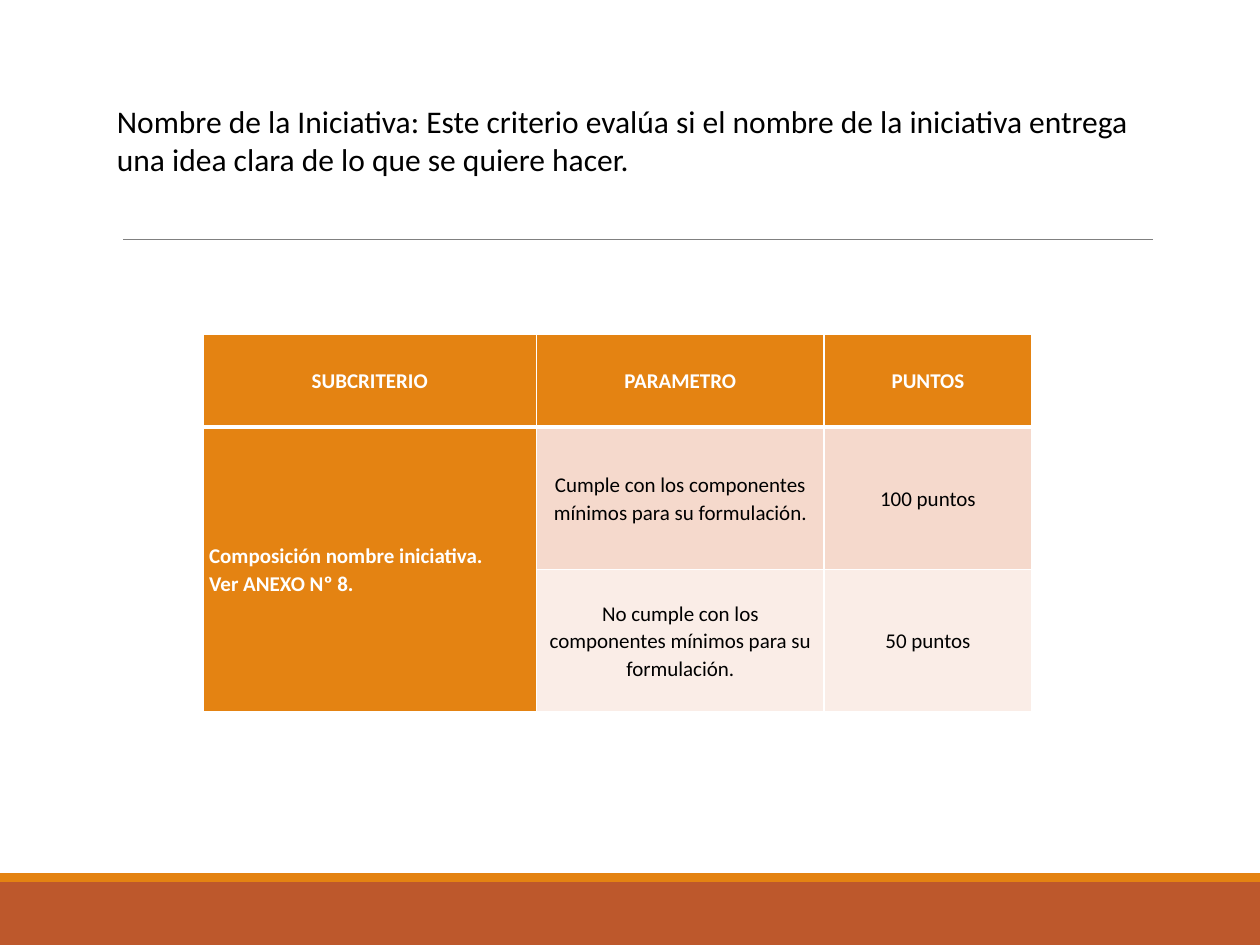
from lxml.etree import SubElement
from pptx import Presentation
from pptx.dml.color import RGBColor
from pptx.enum.shapes import MSO_CONNECTOR, MSO_SHAPE
from pptx.enum.text import MSO_ANCHOR, PP_ALIGN
from pptx.oxml.ns import qn
from pptx.util import Inches, Pt

# Content
TITLE = ("Nombre de la Iniciativa: Este criterio evalúa si el nombre de la "
         "iniciativa entrega una idea clara de lo que se quiere hacer.")
ROWS = [
    ["SUBCRITERIO", "PARAMETRO", "PUNTOS"],
    ["Composición nombre iniciativa.\nVer ANEXO Nº 8.",
     "Cumple con los componentes mínimos para su formulación.", "100 puntos"],
    [None, "No cumple con los componentes mínimos para su formulación.", "50 puntos"],
]

# Format
COLORS = {"orange": "E48312", "rust": "BD582C", "gray": "808080", "white": "FFFFFF",
          "black": "000000", "peach": "F5D9CC", "pale": "FAEDE7"}
ROW_FILLS = ["orange", "peach", "pale"]
WIDTH, HEIGHT = 10, 7.5
COLUMN_WIDTHS = [2.65, 2.28, 1.65]
ROW_HEIGHTS = [0.74, 1.13, 1.13]
TABLE_LEFT, TABLE_TOP = 1.61, 2.65
FOOTER_HEIGHT, STRIPE_HEIGHT = 0.5, 0.07


def color(name):
    return RGBColor.from_string(COLORS[name])


def write(frame, text, size=12, ink="black", bold=False, align=PP_ALIGN.LEFT, spacing=None):
    frame.word_wrap = True
    for index, line in enumerate(text.split("\n")):
        para = frame.paragraphs[0] if index == 0 else frame.add_paragraph()
        para.alignment = align
        para.line_spacing = spacing
        span = para.add_run()
        span.text = line
        span.font.name = "Calibri"
        span.font.size = Pt(size)
        span.font.bold = bold
        span.font.color.rgb = color(ink)


def add_band(page, top, height, fill):
    band = page.shapes.add_shape(MSO_SHAPE.RECTANGLE, 0, Inches(top),
                                 Inches(WIDTH), Inches(height))
    band.shadow.inherit = False
    band.fill.solid()
    band.fill.fore_color.rgb = color(fill)
    band.line.fill.background()


def set_borders(cell, **widths):
    properties = cell._tc.get_or_add_tcPr()
    for position, side in enumerate(("L", "R", "T", "B")):
        line = properties.makeelement(qn(f"a:ln{side}"), {"w": str(Pt(widths.get(side, 1)))})
        paint = SubElement(line, qn("a:solidFill"))
        SubElement(paint, qn("a:srgbClr"), val=COLORS["white"])
        properties.insert(position, line)


def add_scores(page):
    table = page.shapes.add_table(
        len(ROWS), len(COLUMN_WIDTHS), Inches(TABLE_LEFT), Inches(TABLE_TOP),
        Inches(sum(COLUMN_WIDTHS)), Inches(sum(ROW_HEIGHTS))).table
    for column, width in zip(table.columns, COLUMN_WIDTHS):
        column.width = Inches(width)
    for row, height in zip(table.rows, ROW_HEIGHTS):
        row.height = Inches(height)
    table.cell(1, 0).merge(table.cell(2, 0))

    for r, texts in enumerate(ROWS):
        for c, text in enumerate(texts):
            cell = table.cell(r, c)
            heading = r == 0 or c == 0
            cell.fill.solid()
            cell.fill.fore_color.rgb = color("orange" if heading else ROW_FILLS[r])
            set_borders(cell, T=3 if r == 1 else 1, B=3 if r == 0 else 1)
            cell.vertical_anchor = MSO_ANCHOR.MIDDLE
            cell.margin_left = cell.margin_right = Inches(0.05)
            cell.margin_top = cell.margin_bottom = 0
            if text:
                write(cell.text_frame, text, ink="white" if heading else "black",
                      bold=heading, spacing=1.07,
                      align=PP_ALIGN.LEFT if r and c == 0 else PP_ALIGN.CENTER)


def main():
    deck = Presentation()
    deck.slide_width, deck.slide_height = Inches(WIDTH), Inches(HEIGHT)
    page = deck.slides.add_slide(deck.slide_layouts[6])

    # Footer bands
    footer_top = HEIGHT - FOOTER_HEIGHT
    add_band(page, footer_top, FOOTER_HEIGHT, "rust")
    add_band(page, footer_top - STRIPE_HEIGHT, STRIPE_HEIGHT, "orange")

    # Rule below the title
    rule = page.shapes.add_connector(MSO_CONNECTOR.STRAIGHT, Inches(0.98), Inches(1.9),
                                     Inches(9.15), Inches(1.9))
    rule.line.color.rgb = color("gray")
    rule.line.width = Pt(0.5)
    SubElement(rule._element.spPr, qn("a:effectLst"))

    # Title
    box = page.shapes.add_textbox(Inches(0.83), Inches(0.76), Inches(8.43), Inches(1.01))
    write(box.text_frame, TITLE, size=18)

    # Score table
    add_scores(page)
    deck.save("out.pptx")


if __name__ == "__main__":
    main()
